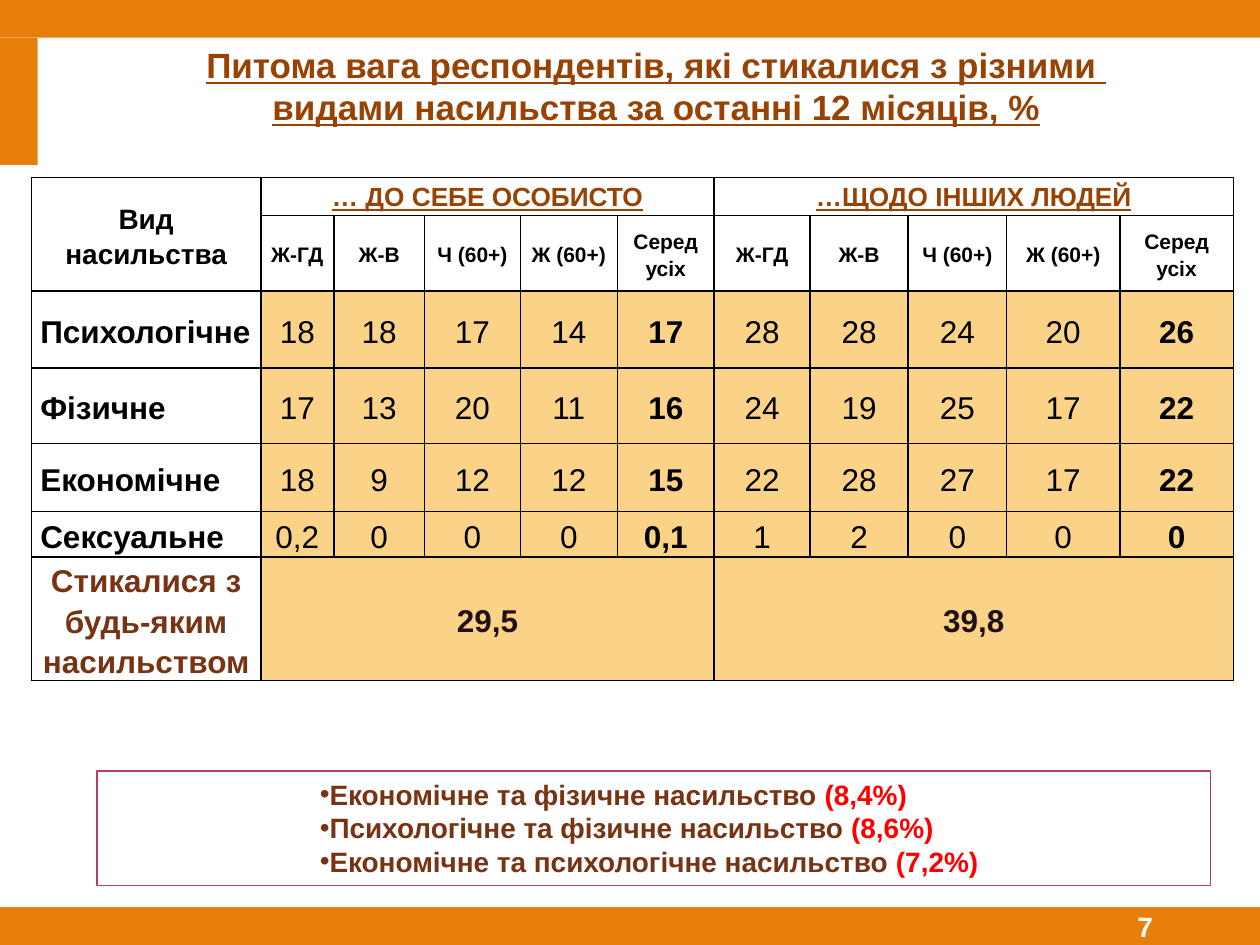
from lxml import etree
from pptx import Presentation
from pptx.dml.color import RGBColor
from pptx.enum.shapes import MSO_SHAPE
from pptx.enum.text import MSO_ANCHOR as ANCHOR, MSO_AUTO_SIZE as AUTO, PP_ALIGN as ALIGN
from pptx.oxml.ns import qn
from pptx.util import Inches, Pt

ORANGE = RGBColor(0xE8, 0x7E, 0x0A)
PEACH = RGBColor(0xFB, 0xD3, 0x88)
RUST = RGBColor(0x98, 0x42, 0x04)
BROWN = RGBColor(0x77, 0x33, 0x13)
DARK = RGBColor(0x21, 0x0F, 0x17)
MAGENTA = RGBColor(0xB8, 0x3D, 0x68)
RED = RGBColor(0xFF, 0, 0)
BLACK = RGBColor(0, 0, 0)
WHITE = RGBColor(0xFF, 0xFF, 0xFF)

COL_WIDTHS = [1.82, 0.58, 0.72, 0.76, 0.77, 0.77, 0.76, 0.78, 0.78, 0.9, 0.9]
ROW_HEIGHTS = [0.3, 0.6, 0.61, 0.6, 0.54, 0.36, 0.98]
GROUP_STARTS = (1, 6)
GROUP_SIZE = 5
GROUPS = ["… ДО СЕБЕ ОСОБИСТО", "…ЩОДО ІНШИХ ЛЮДЕЙ"]
RESPONDENTS = ["Ж-ГД", "Ж-В", "Ч (60+)", "Ж (60+)", "Серед усіх"]
VIOLENCE = [
    ("Психологічне", "18 18 17 14 17 28 28 24 20 26"),
    ("Фізичне", "17 13 20 11 16 24 19 25 17 22"),
    ("Економічне", "18 9 12 12 15 22 28 27 17 22"),
    ("Сексуальне", "0,2 0 0 0 0,1 1 2 0 0 0"),
]
TOTALS = ["29,5", "39,8"]
OVERLAPS = [
    ("Економічне та фізичне насильство ", "(8,4%)"),
    ("Психологічне та фізичне насильство ", "(8,6%)"),
    ("Економічне та психологічне насильство ", "(7,2%)"),
]


def add_run(p, text, color, **font):
    r = p.add_run()
    r.text = text
    r.font.color.rgb = color
    for name, value in {"name": "Arial", "bold": True, **font}.items():
        setattr(r.font, name, value)


def add_rect(s, box, fill=None, line=None):
    sp = s.shapes.add_shape(MSO_SHAPE.RECTANGLE, *map(Inches, box))
    sp.shadow.inherit = False
    if fill is None:
        sp.fill.background()
    else:
        sp.fill.solid()
        sp.fill.fore_color.rgb = fill
    if line is None:
        sp.line.fill.background()
    else:
        sp.line.color.rgb = line
        sp.line.width = Pt(0.75)
    return sp


def add_frame(s, width, height, number):
    # Orange bands at the edges, the last one holding the page number
    band = 0.3
    foot = height - band
    for box in [(0, foot, 1.83, band), (1.71, foot, 6.56, band),
                (0, 0, width, band), (0, band, band, 1.01)]:
        add_rect(s, box, ORANGE)
    tf = add_rect(s, (8.18, foot, width - 8.18, band), ORANGE).text_frame
    tf.vertical_anchor = ANCHOR.MIDDLE
    tf.margin_top = tf.margin_bottom = 0
    tf.margin_right = Inches(0.85)
    p = tf.paragraphs[0]
    p.alignment = ALIGN.RIGHT
    add_run(p, number, WHITE, size=Pt(16))


def set_title(s, box, lines):
    sp = s.shapes.title
    sp.left, sp.top, sp.width, sp.height = map(Inches, box)
    tf = sp.text_frame
    tf.auto_size = AUTO.NONE
    tf.vertical_anchor = ANCHOR.MIDDLE
    tf.margin_left = Inches(0.22)
    p = tf.paragraphs[0]
    p.alignment = ALIGN.CENTER
    for i, line in enumerate(lines):
        if i:
            p.add_line_break()
        add_run(p, line, RUST, size=Pt(20), underline=True)


def add_borders(cell):
    tc_pr = cell._tc.get_or_add_tcPr()
    for i, side in enumerate(("a:lnL", "a:lnR", "a:lnT", "a:lnB")):
        ln = etree.Element(qn(side), w=str(Pt(1)))
        fill = etree.SubElement(ln, qn("a:solidFill"))
        etree.SubElement(fill, qn("a:srgbClr"), val=str(BLACK))
        tc_pr.insert(i, ln)


def fill_cell(cell, text, size, color=BLACK, align=ALIGN.CENTER,
              anchor=ANCHOR.MIDDLE, **font):
    cell.vertical_anchor = anchor
    p = cell.text_frame.paragraphs[0]
    p.alignment = align
    p.line_spacing = 1.15
    add_run(p, text, color, size=Pt(size), **font)


def add_violence_table(s, left, top):
    table = s.shapes.add_table(
        len(ROW_HEIGHTS), len(COL_WIDTHS), Inches(left), Inches(top),
        Inches(sum(COL_WIDTHS)), Inches(sum(ROW_HEIGHTS))).table
    table.first_row = table.horz_banding = False
    for col, width in zip(table.columns, COL_WIDTHS):
        col.width = Inches(width)
    for row, height in zip(table.rows, ROW_HEIGHTS):
        row.height = Inches(height)

    # Fills, margins and borders
    for r, row in enumerate(table.rows):
        for c, cell in enumerate(row.cells):
            cell.fill.solid()
            cell.fill.fore_color.rgb = PEACH if r > 1 and c else WHITE
            cell.margin_left = cell.margin_right = Inches(0.07)
            cell.margin_top, cell.margin_bottom = Inches(0.01), 0
            add_borders(cell)

    # Header and totals, merged over each group of respondents
    last = len(ROW_HEIGHTS) - 1
    table.cell(0, 0).merge(table.cell(1, 0))
    fill_cell(table.cell(0, 0), "Вид насильства", 16)
    fill_cell(table.cell(last, 0), "Стикалися з будь-яким насильством", 18,
              BROWN, anchor=ANCHOR.BOTTOM)
    for start, group, total in zip(GROUP_STARTS, GROUPS, TOTALS):
        for r in (0, last):
            table.cell(r, start).merge(table.cell(r, start + GROUP_SIZE - 1))
        fill_cell(table.cell(0, start), group, 15, RUST, anchor=ANCHOR.TOP,
                  underline=True)
        fill_cell(table.cell(last, start), total, 18, DARK)
        for c, name in enumerate(RESPONDENTS, start):
            fill_cell(table.cell(1, c), name, 12)

    # Values, with the average column of each group in bold
    for r, (kind, values) in enumerate(VIOLENCE, 2):
        fill_cell(table.cell(r, 0), kind, 18, align=ALIGN.LEFT)
        for c, value in enumerate(values.split(), 1):
            fill_cell(table.cell(r, c), value, 18, bold=c % GROUP_SIZE == 0)


def add_overlaps(s, box):
    tf = add_rect(s, box, line=MAGENTA).text_frame
    tf.word_wrap = True
    tf.vertical_anchor = ANCHOR.TOP
    for i, (kinds, share) in enumerate(OVERLAPS):
        p = tf.add_paragraph() if i else tf.paragraphs[0]
        p.alignment = ALIGN.LEFT
        p_pr = p._p.get_or_add_pPr()
        p_pr.set("marL", str(Inches(1.48)))
        p_pr.set("indent", str(Inches(0.19)))
        etree.SubElement(p_pr, qn("a:buFont"), typeface="Arial")
        etree.SubElement(p_pr, qn("a:buChar"), char="•")
        add_run(p, kinds, BROWN, size=Pt(16))
        add_run(p, share, RED, size=Pt(16))


def main():
    width, height = 10, 7.5
    prs = Presentation()
    prs.slide_width, prs.slide_height = Inches(width), Inches(height)
    s = prs.slides.add_slide(prs.slide_layouts[5])
    add_frame(s, width, height, "7")
    set_title(s, (0.3, 0.3, 9.7, 0.76),
              ["Питома вага респондентів, які стикалися з різними ",
               "видами насильства за останні 12 місяців, %"])
    add_violence_table(s, 0.25, 1.41)
    add_overlaps(s, (0.77, 6.12, 8.84, 0.91))
    prs.save("out.pptx")


if __name__ == "__main__":
    main()
